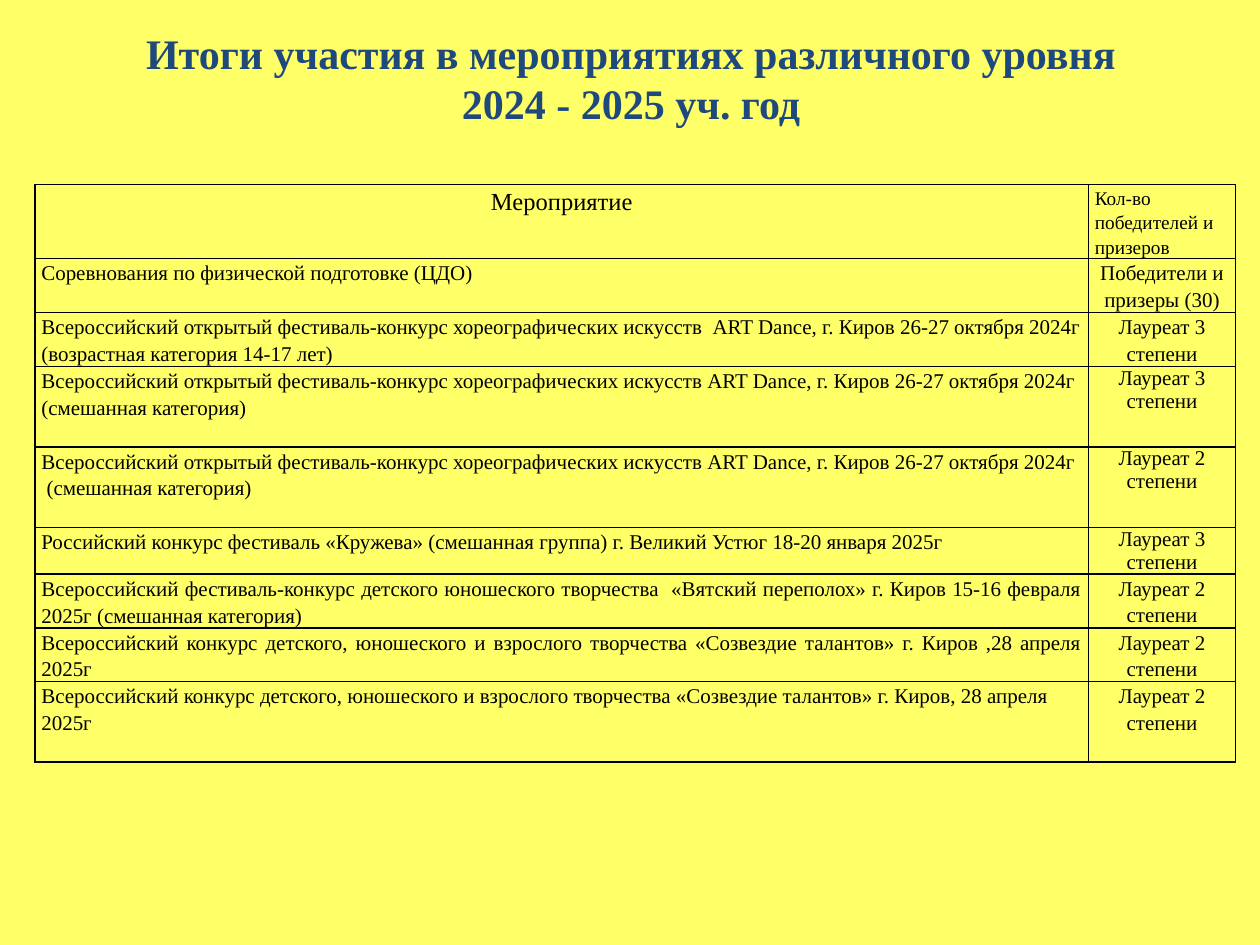
from lxml import etree
from pptx import Presentation
from pptx.dml.color import RGBColor
from pptx.enum import text
from pptx.oxml import ns
from pptx.util import Pt

YELLOW = RGBColor(0xFF, 0xFF, 0x68)
NAVY = RGBColor(0x1F, 0x49, 0x7D)
BLACK = RGBColor(0, 0, 0)
FONT = "Times New Roman"
LEFT, CENTER, JUSTIFY = text.PP_ALIGN.LEFT, text.PP_ALIGN.CENTER, text.PP_ALIGN.JUSTIFY

TITLE = "Итоги участия в мероприятиях различного уровня\v2024 - 2025 уч. год"
HEADER = ("Мероприятие", "Кол-во победителей и призеров")
FESTIVAL = "Всероссийский открытый фестиваль-конкурс хореографических искусств"
CONTEST = "Всероссийский конкурс детского, юношеского и взрослого творчества «Созвездие талантов»"
SECOND, THIRD = "Лауреат 2 степени", "Лауреат 3 степени"
WIDE, SINGLE = 1.15, 1.0

# event, award, row height, event alignment, award line spacing
EVENTS = [
    ("Соревнования по физической подготовке (ЦДО)",
     "Победители и призеры (30)", 30.8, LEFT, WIDE),
    (FESTIVAL + "  ART Dance, г. Киров 26-27 октября 2024г (возрастная категория 14-17 лет)",
     THIRD, 30.8, LEFT, WIDE),
    (FESTIVAL + " ART Dance, г. Киров 26-27 октября 2024г (смешанная категория)",
     THIRD, 46, LEFT, SINGLE),
    (FESTIVAL + " ART Dance, г. Киров 26-27 октября 2024г\v (смешанная категория)",
     SECOND, 46, LEFT, SINGLE),
    ("Российский конкурс фестиваль «Кружева» (смешанная группа) г. Великий Устюг 18-20 января 2025г",
     THIRD, 26.5, LEFT, SINGLE),
    ("Всероссийский фестиваль-конкурс детского юношеского творчества  «Вятский переполох» "
     "г. Киров 15-16 февраля 2025г (смешанная категория)",
     SECOND, 30.8, JUSTIFY, WIDE),
    (CONTEST + " г. Киров ,28 апреля 2025г", SECOND, 30.8, JUSTIFY, WIDE),
    (CONTEST + " г. Киров, 28 апреля 2025г", SECOND, 46, LEFT, WIDE),
]
COLUMN_WIDTHS = (602, 84)
HEADER_HEIGHT = 42.3


def format_text(frame, size, color, alignment, spacing, bold=False):
    for paragraph in frame.paragraphs:
        paragraph.alignment = alignment
        paragraph.line_spacing = spacing
        for run in paragraph.runs:
            run.font.name = FONT
            run.font.size = Pt(size)
            run.font.bold = bold
            run.font.color.rgb = color


def add_borders(cell):
    properties = cell._tc.get_or_add_tcPr()
    for index, side in enumerate(("lnL", "lnR", "lnT", "lnB")):
        line = etree.Element(ns.qn("a:" + side), w=str(Pt(1)))
        fill = etree.SubElement(line, ns.qn("a:solidFill"))
        etree.SubElement(fill, ns.qn("a:srgbClr"), val=str(BLACK))
        properties.insert(index, line)


def fill_cell(cell, content, size, alignment, spacing):
    cell.text_frame.text = content
    cell.margin_left = cell.margin_right = Pt(3.6)
    cell.margin_top = cell.margin_bottom = 0
    cell.vertical_anchor = (text.MSO_ANCHOR.MIDDLE if alignment == JUSTIFY
                            else text.MSO_ANCHOR.TOP)
    cell.fill.background()
    add_borders(cell)
    format_text(cell.text_frame, size, BLACK, alignment, spacing)


def add_title(slide):
    title = slide.shapes.title
    title.left, title.top, title.width, title.height = Pt(36.5), 0, Pt(648), Pt(88.5)
    title.text_frame.text = TITLE
    title.text_frame.vertical_anchor = text.MSO_ANCHOR.MIDDLE
    format_text(title.text_frame, 24, NAVY, CENTER, 1.0, bold=True)


def add_results(slide):
    heights = [HEADER_HEIGHT] + [event[2] for event in EVENTS]
    table = slide.shapes.add_table(
        len(heights), len(COLUMN_WIDTHS), Pt(20), Pt(105.5),
        Pt(sum(COLUMN_WIDTHS)), Pt(sum(heights))).table
    table.first_row = table.horz_banding = False
    for column, width in zip(table.columns, COLUMN_WIDTHS):
        column.width = Pt(width)
    for row, height in zip(table.rows, heights):
        row.height = Pt(height)
    fill_cell(table.cell(0, 0), HEADER[0], 14, CENTER, WIDE)
    fill_cell(table.cell(0, 1), HEADER[1], 11, LEFT, WIDE)
    for index, (event, award, _, alignment, spacing) in enumerate(EVENTS, 1):
        fill_cell(table.cell(index, 0), event, 12, alignment, WIDE)
        fill_cell(table.cell(index, 1), award, 12, CENTER, spacing)


def main():
    presentation = Presentation()
    presentation.slide_width, presentation.slide_height = Pt(720), Pt(540)
    slide = presentation.slides.add_slide(presentation.slide_layouts[5])
    slide.background.fill.solid()
    slide.background.fill.fore_color.rgb = YELLOW
    add_title(slide)
    add_results(slide)
    presentation.save("out.pptx")


if __name__ == "__main__":
    main()
